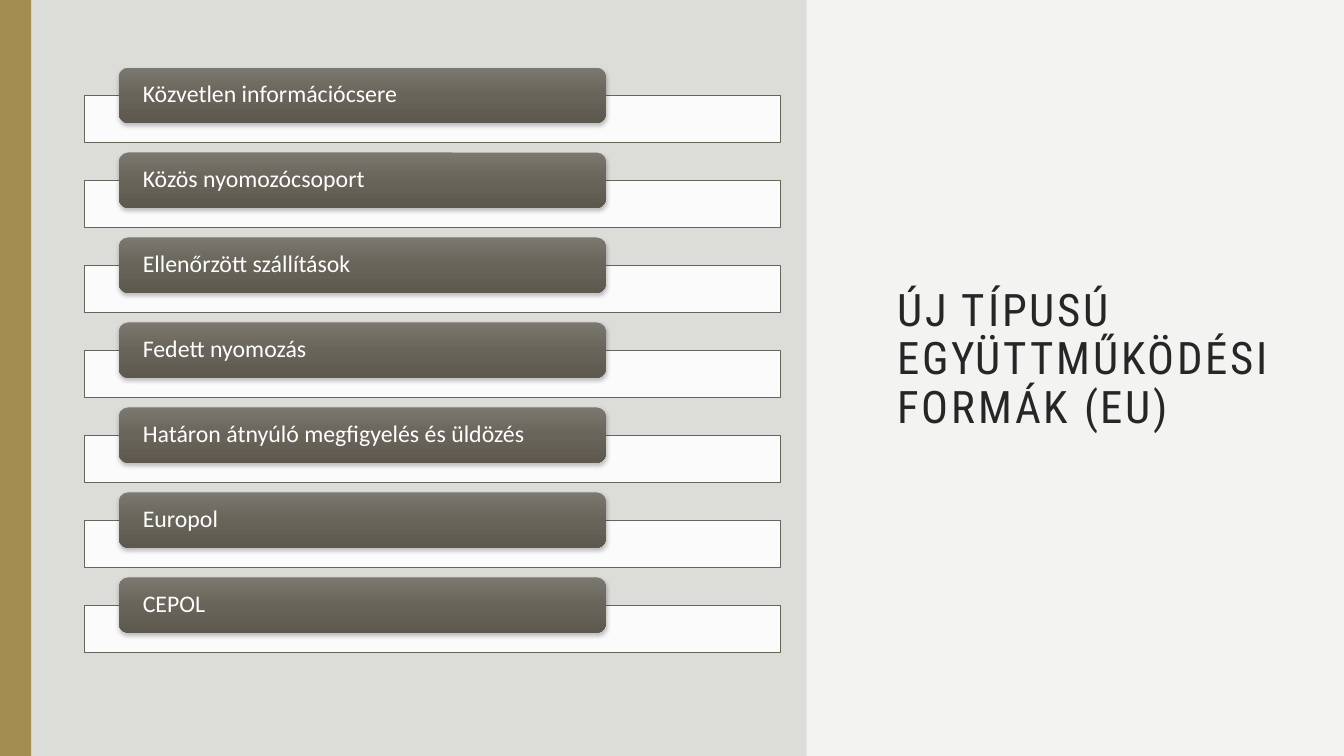
import dataclasses
import typing

import lxml.etree
import pptx
import pptx.dml.color
import pptx.enum.shapes
import pptx.enum.text
import pptx.oxml.ns
import pptx.util

Inches = pptx.util.Inches
Pt = pptx.util.Pt
RGB = pptx.dml.color.RGBColor.from_string
qn = pptx.oxml.ns.qn
SHAPE = pptx.enum.shapes.MSO_SHAPE
LEFT = pptx.enum.text.PP_ALIGN.LEFT
MIDDLE = pptx.enum.text.MSO_ANCHOR.MIDDLE


@dataclasses.dataclass(frozen=True)
class Theme:
    page: str = "F3F3F2"
    panel: str = "DCDCD9"
    accent: str = "A38D51"
    ink: str = "262626"
    white: str = "FFFFFF"
    outline: str = "67645A"
    shadow: str = "000000"
    gradient: tuple = ((0, "7B7870"), (50, "686459"), (100, "5D594F"))
    title_font: str = "Roboto Condensed"
    label_font: str = "Calibri"
    title_size: int = 32
    label_size: int = 17


@dataclasses.dataclass(frozen=True)
class Box:
    left: float
    top: float
    width: float
    height: float

    def lengths(self) -> list:
        return [Inches(value) for value in dataclasses.astuple(self)]


THEME = Theme()
PAGE_WIDTH, PAGE_HEIGHT = 13.33, 7.5
TITLE = "ÚJ TÍPUSÚ EGYÜTTMŰKÖDÉSI FORMÁK (EU)"
LABELS = (
    "Közvetlen információcsere",
    "Közös nyomozócsoport",
    "Ellenőrzött szállítások",
    "Fedett nyomozás",
    "Határon átnyúló megfigyelés és üldözés",
    "Europol",
    "CEPOL",
)
FIRST_ROW, ROW_STEP = 0.67, 0.843
WAVE_LEFT, WAVE_COUNT = 8.08, 5
# Offsets (x, y) from the trough of a wave to its crest.
HALF_WAVE = (
    (0, 0), (0, 0.07), (0.01, 0.14), (0.02, 0.2), (0.04, 0.25), (0.06, 0.29),
    (0.08, 0.33), (0.1, 0.37), (0.12, 0.41), (0.14, 0.45), (0.16, 0.5),
    (0.17, 0.55), (0.19, 0.61), (0.19, 0.68), (0.2, 0.75),
)


def apply_format(target: typing.Any, values: dict) -> None:
    for name, value in values.items():
        setattr(target, name, value)


def fill_solid(shape: typing.Any, color: str) -> None:
    shape.fill.solid()
    shape.fill.fore_color.rgb = RGB(color)


def add_plain(shapes: typing.Any, kind: typing.Any, box: Box) -> typing.Any:
    """Add a preset shape without line or shadow."""
    shape = shapes.add_shape(kind, *box.lengths())
    shape.shadow.inherit = False
    shape.line.fill.background()
    return shape


def add_color(parent: typing.Any, color: str) -> typing.Any:
    return lxml.etree.SubElement(parent, qn("a:srgbClr"), val=color)


def add_alpha(color: typing.Any, percent: int) -> None:
    lxml.etree.SubElement(color, qn("a:alpha"), val=str(percent * 1000))


def fill_gradient(shape: typing.Any) -> None:
    shape.fill.gradient()
    shape.fill.gradient_angle = 270
    stops = shape._element.spPr.find(".//" + qn("a:gsLst"))
    for stop in list(stops):
        stops.remove(stop)
    for percent, color in THEME.gradient:
        stop = lxml.etree.SubElement(stops, qn("a:gs"), pos=str(percent * 1000))
        add_color(stop, color)


def add_shadow(shape: typing.Any) -> None:
    effects = shape._element.spPr.find(qn("a:effectLst"))
    shadow = lxml.etree.SubElement(
        effects, qn("a:outerShdw"), blurRad=str(Pt(3)), dist=str(Pt(2)),
        dir="5400000", rotWithShape="0",
    )
    add_alpha(add_color(shadow, THEME.shadow), 25)


def set_text(shape: typing.Any, text: str, frame_format: dict, font_format: dict,
             color: str) -> typing.Any:
    """Write one left-aligned paragraph and return its run."""
    frame = shape.text_frame
    apply_format(frame, {"word_wrap": True, "vertical_anchor": MIDDLE, **frame_format})
    para = frame.paragraphs[0]
    apply_format(para, {"alignment": LEFT, "line_spacing": 0.9})
    span = para.add_run()
    span.text = text
    apply_format(span.font, font_format)
    span.font.color.rgb = RGB(color)
    return span


def add_title(page: typing.Any) -> None:
    title = page.shapes.title
    box = Box(8.8, 0.53, 4, 6.09)
    apply_format(title, dict(zip(("left", "top", "width", "height"), box.lengths())))
    span = set_text(
        title, TITLE, {"auto_size": pptx.enum.text.MSO_AUTO_SIZE.NONE},
        {"name": THEME.title_font, "size": Pt(THEME.title_size)}, THEME.ink,
    )
    span.font._element.set("spc", "200")


def add_wavy_panel(page: typing.Any) -> None:
    wave = PAGE_HEIGHT / WAVE_COUNT
    profile = HALF_WAVE + tuple((x, wave - y) for x, y in HALF_WAVE[-2::-1])
    edge = [
        (WAVE_LEFT + x, number * wave + y)
        for number in range(WAVE_COUNT) for x, y in profile
    ]
    builder = page.shapes.build_freeform(0, 0, scale=Inches(1))
    builder.add_line_segments(edge + [(0, PAGE_HEIGHT)], close=True)
    panel = builder.convert_to_shape()
    panel.shadow.inherit = False
    panel.line.fill.background()
    fill_solid(panel, THEME.panel)


def add_row(shapes: typing.Any, top: float, label: str) -> None:
    """Draw a white bar with its raised label."""
    bar = add_plain(shapes, SHAPE.RECTANGLE, Box(0.84, top + 0.275, 6.9, 0.47))
    fill_solid(bar, THEME.white)
    add_alpha(bar._element.spPr.find(qn("a:solidFill"))[0], 90)
    bar.line.color.rgb = RGB(THEME.outline)
    bar.line.width = Pt(0.5)

    tab = add_plain(shapes, SHAPE.ROUNDED_RECTANGLE, Box(1.18, top, 4.83, 0.55))
    fill_gradient(tab)
    add_shadow(tab)
    set_text(
        tab, label,
        {"margin_left": Inches(0.21), "margin_right": Inches(0.21),
         "margin_top": 0, "margin_bottom": 0},
        {"name": THEME.label_font, "size": Pt(THEME.label_size)}, THEME.white,
    )


def main() -> None:
    deck = pptx.Presentation()
    deck.slide_width, deck.slide_height = Inches(PAGE_WIDTH), Inches(PAGE_HEIGHT)
    page = deck.slides.add_slide(deck.slide_layouts.get_by_name("Title Only"))
    fill_solid(page.background, THEME.page)
    add_title(page)
    add_wavy_panel(page)
    stripe = add_plain(page.shapes, SHAPE.RECTANGLE, Box(0, 0, 0.31, PAGE_HEIGHT))
    fill_solid(stripe, THEME.accent)
    rows = page.shapes.add_group_shape()
    for index, label in enumerate(LABELS):
        add_row(rows.shapes, FIRST_ROW + index * ROW_STEP, label)
    deck.save("out.pptx")


if __name__ == "__main__":
    main()
